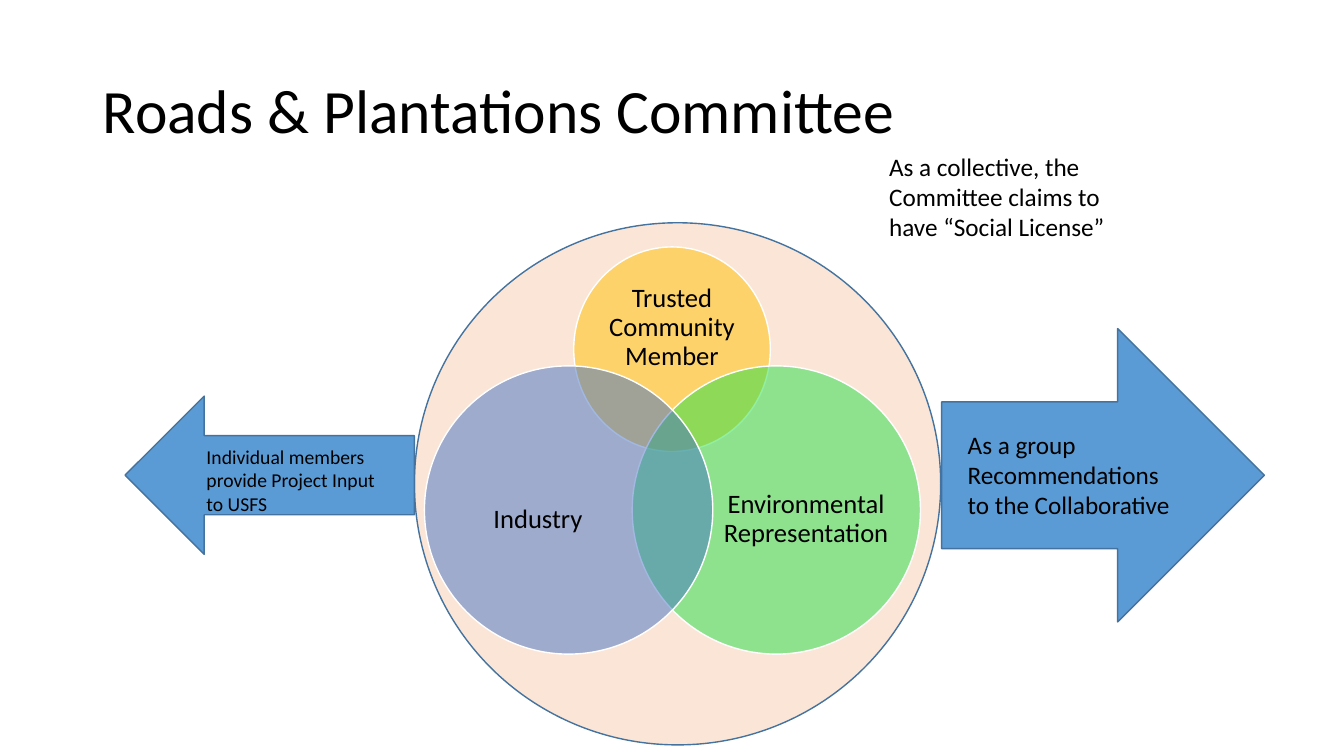
from lxml import etree
from pptx import Presentation
from pptx.dml.color import RGBColor
from pptx.enum.shapes import MSO_SHAPE as SHAPE
from pptx.enum.text import MSO_ANCHOR as ANCHOR, MSO_AUTO_SIZE as AUTO, PP_ALIGN as ALIGN
from pptx.oxml.ns import qn
from pptx.util import Inches, Pt

BLUE, EDGE, PEACH, WHITE = "5B9BD5", "43739E", "FBE5D6", "FFFFFF"


def rgb(color):
    return RGBColor.from_string(color)


def inches(*lengths):
    return [Inches(n) for n in lengths]


def write(sp, text, size=18, align=ALIGN.LEFT, anchor=ANCHOR.TOP,
          spacing=1.0, inset=None, auto=AUTO.NONE):
    tf = sp.text_frame
    tf.word_wrap, tf.auto_size, tf.vertical_anchor = True, auto, anchor
    if inset is not None:
        tf.margin_left = tf.margin_right = Inches(inset)
        tf.margin_top = tf.margin_bottom = Inches(inset)
    p = tf.paragraphs[0]
    p.alignment, p.line_spacing = align, spacing
    r = p.add_run()
    r.text = text
    r.font.name, r.font.size = "Calibri", Pt(size)
    r.font.color.rgb = rgb("000000")


def add_figure(shapes, kind, box, fill, line=EDGE, alpha=None):
    """Add a preset shape; alpha is its opacity in percent."""
    sp = shapes.add_shape(kind, *inches(*box))
    sp.shadow.inherit = False
    sp.fill.solid()
    sp.fill.fore_color.rgb = rgb(fill)
    if alpha is not None:
        color = sp.fill._xPr.find(".//" + qn("a:srgbClr"))
        etree.SubElement(color, qn("a:alpha")).set("val", str(alpha * 1000))
    sp.line.color.rgb = rgb(line)
    sp.line.width = Pt(1)


def add_text(shapes, box, text, **fmt):
    write(shapes.add_textbox(*inches(*box)), text, **fmt)


def add_title(slide, box, text):
    title = slide.shapes.title
    title.left, title.top, title.width, title.height = inches(*box)
    write(title, text, size=44, anchor=ANCHOR.MIDDLE, spacing=0.9)


def add_committee(slide, box):
    """Draw the enclosing circle with the three overlapping member circles."""
    add_figure(slide.shapes, SHAPE.OVAL, box, PEACH)
    x, y = box[:2]
    shapes = slide.shapes.add_group_shape().shapes
    big, circle_top, label_top = 2.86, y + 1.42, y + 2.16
    members = [
        ("Trusted Community Member", "FFC000",
         (x + 1.58, y + 0.24, 1.95, 2.03), (x + 1.84, y + 0.59, 1.43, 0.91)),
        ("Environmental Representation", "23E148",
         (x + 2.16, circle_top, big, big), (x + 3.03, label_top, 1.71, 1.57)),
        ("Industry", "4472C4",
         (x + 0.1, circle_top, big, big), (x + 0.37, label_top, 1.71, 1.57)),
    ]
    for name, color, circle, label in members:
        add_figure(shapes, SHAPE.OVAL, circle, color, line=WHITE, alpha=50)
        add_text(shapes, label, name, size=19, align=ALIGN.CENTER,
                 anchor=ANCHOR.MIDDLE, spacing=0.9, inset=0)


def add_arrow(slide, kind, box, label, text, size):
    """Draw a block arrow; label is its text box relative to the arrow."""
    x, y = box[:2]
    dx, dy, w, h = label
    add_figure(slide.shapes, kind, box, BLUE)
    add_text(slide.shapes, (x + dx, y + dy, w, h), text, size=size,
             auto=AUTO.SHAPE_TO_FIT_TEXT)


def build_slide(prs):
    slide = prs.slides.add_slide(prs.slide_layouts[5])
    add_title(slide, (0.92, 0.4, 11.5, 1.45), "Roads & Plantations Committee")
    add_committee(slide, (4.11, 2.21, 5.22, 5.18))
    add_arrow(slide, SHAPE.RIGHT_ARROW, (9.34, 3.26, 3.2, 2.91),
              (0.16, 0.95, 2.27, 1.01),
              "As a group Recommendations to the Collaborative", 18)
    add_arrow(slide, SHAPE.LEFT_ARROW, (1.24, 3.93, 2.87, 1.57),
              (0.71, 0.43, 2, 0.81),
              "Individual members provide Project Input to USFS", 14)
    add_text(slide.shapes, (8.72, 1.45, 2.5, 1.01),
             "As a collective, the Committee claims to have “Social License”",
             auto=AUTO.SHAPE_TO_FIT_TEXT)


def main():
    prs = Presentation()
    prs.slide_width, prs.slide_height = inches(13.33, 7.5)
    build_slide(prs)
    prs.save("out.pptx")


if __name__ == "__main__":
    main()
